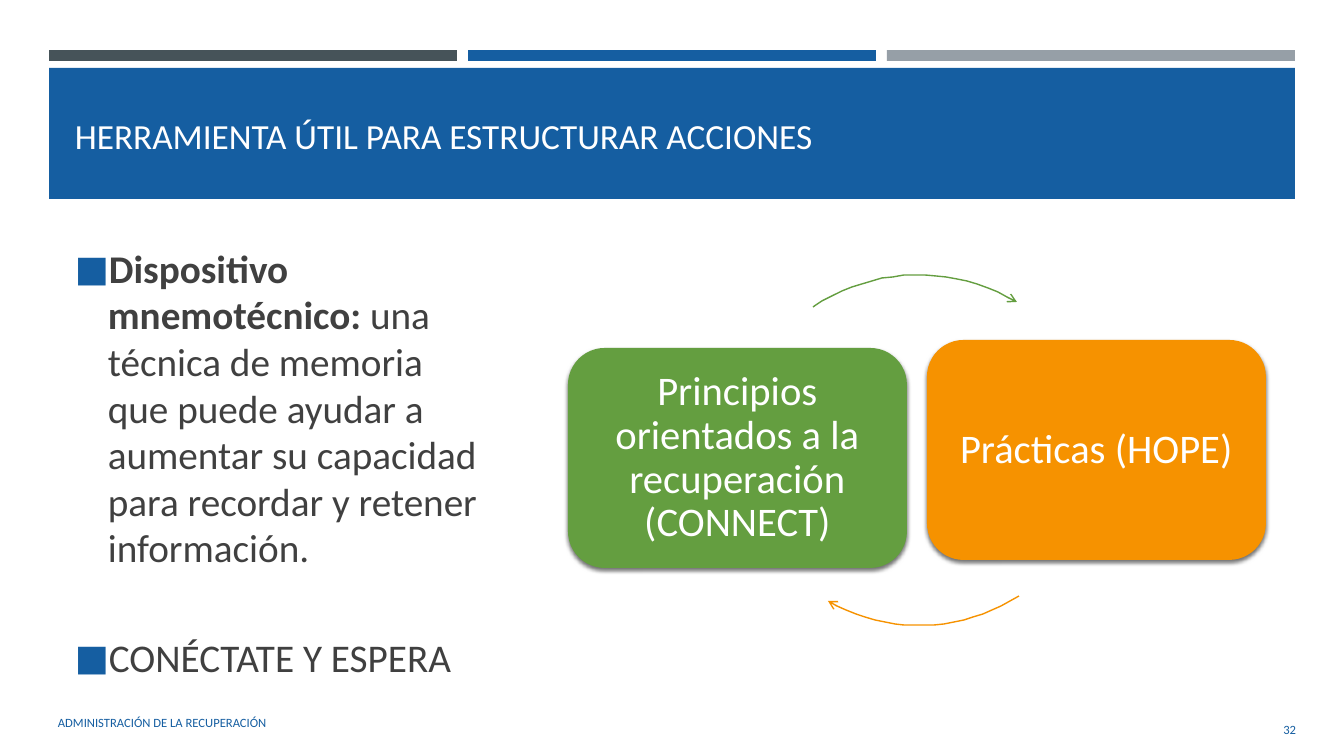
from lxml import etree
from pptx import Presentation
from pptx.dml.color import RGBColor
from pptx.enum.shapes import MSO_SHAPE
from pptx.enum.text import MSO_ANCHOR, PP_ALIGN
from pptx.oxml import parse_xml
from pptx.oxml.ns import nsdecls, qn
from pptx.util import Emu, Pt

RECT, ROUNDED = MSO_SHAPE.RECTANGLE, MSO_SHAPE.ROUNDED_RECTANGLE
TOP, MIDDLE = MSO_ANCHOR.TOP, MSO_ANCHOR.MIDDLE
LEFT, CENTER, RIGHT = PP_ALIGN.LEFT, PP_ALIGN.CENTER, PP_ALIGN.RIGHT

EMU_PER_PX = 914400 / 100.8
FONT = "Calibri"
COLORS = {
    "blue": "155EA1",
    "slate": "465359",
    "silver": "969FA7",
    "green": "649E40",
    "orange": "F69200",
    "text": "404040",
    "white": "FFFFFF",
}


def px(value):
    return Emu(round(value * EMU_PER_PX))


def rgb(name):
    return RGBColor.from_string(COLORS[name])


def apply_format(target, values):
    for name, value in values.items():
        setattr(target, name, value)


class SlideBuilder:
    def __init__(self, deck):
        self.page = deck.slides.add_slide(deck.slide_layouts[6])
        self.shapes = self.page.shapes

    def block(self, kind, place, color):
        shape = self.shapes.add_shape(kind, *map(px, place))
        shape.shadow.inherit = False
        shape.fill.solid()
        shape.fill.fore_color.rgb = rgb(color)
        shape.line.fill.background()
        return shape

    def add_text(self, frame, spans, size, color, bullet=False, **paragraph_format):
        """Fill the first paragraph, or append one when it is already used."""
        para = frame.paragraphs[0]
        if para.runs:
            para = frame.add_paragraph()
        if bullet:
            self.add_bullet(para)
        apply_format(para, paragraph_format)
        apply_format(para.font, {"size": Pt(size), "name": FONT})
        for text, bold in spans:
            span = para.add_run()
            span.text = text
            apply_format(span.font, {"size": Pt(size), "name": FONT, "bold": bold})
            span.font.color.rgb = rgb(color)

    def add_bullet(self, para):
        properties = para._p.get_or_add_pPr()
        indent = px(33)
        properties.set("marL", str(indent))
        properties.set("indent", str(-indent))
        for xml in (
            f'<a:buClr {nsdecls("a")}><a:srgbClr val="{COLORS["blue"]}"/></a:buClr>',
            f'<a:buSzPct {nsdecls("a")} val="92000"/>',
            f'<a:buFont {nsdecls("a")} typeface="{FONT}"/>',
            f'<a:buChar {nsdecls("a")} char="■"/>',
        ):
            properties.append(parse_xml(xml))

    def text_box(self, place, anchor=MIDDLE):
        frame = self.shapes.add_textbox(*map(px, place)).text_frame
        apply_format(frame, {"word_wrap": True, "vertical_anchor": anchor})
        return frame

    def card(self, place, color, text):
        shape = self.block(ROUNDED, place, color)
        effects = shape._element.spPr.find(qn("a:effectLst"))
        effects.append(parse_xml(
            f'<a:outerShdw {nsdecls("a")} blurRad="{Pt(3)}" dist="{Pt(2)}" '
            'dir="5400000" rotWithShape="0"><a:srgbClr val="000000">'
            '<a:alpha val="55000"/></a:srgbClr></a:outerShdw>'
        ))
        frame = shape.text_frame
        sides = ("left", "top", "right", "bottom")
        apply_format(frame, {f"margin_{side}": px(12) for side in sides})
        apply_format(frame, {"word_wrap": True, "vertical_anchor": MIDDLE})
        self.add_text(frame, [(text, False)], 29, "white",
                      alignment=CENTER, line_spacing=0.9)

    def curved_arrow(self, controls, color, steps=20):
        """Draw a cubic curve through four control points, with an arrowhead at its end."""
        points = []
        for step in range(steps + 1):
            t = step / steps
            weights = ((1 - t) ** 3, 3 * t * (1 - t) ** 2, 3 * t * t * (1 - t), t ** 3)
            points.append(tuple(
                sum(weight * value for weight, value in zip(weights, axis))
                for axis in zip(*controls)
            ))
        builder = self.shapes.build_freeform(*points[0], scale=EMU_PER_PX)
        builder.add_line_segments(points[1:], close=False)
        arrow = builder.convert_to_shape()
        arrow.shadow.inherit = False
        arrow.fill.background()
        arrow.line.color.rgb = rgb(color)
        arrow.line.width = Pt(1)
        outline = arrow._element.spPr.find(qn("a:ln"))
        etree.SubElement(outline, qn("a:tailEnd"), type="arrow")


def main():
    deck = Presentation()
    apply_format(deck, {"slide_width": px(1344), "slide_height": px(756)})
    slide = SlideBuilder(deck)

    for column, color in enumerate(("slate", "blue", "silver")):
        slide.block(RECT, (49 + 419 * column, 50, 408, 11), color)
    slide.block(RECT, (49, 68, 1246, 131), "blue")

    labels = (
        ((65, 79, 1216, 112), "HERRAMIENTA ÚTIL PARA ESTRUCTURAR ACCIONES", 25.2, "white", LEFT),
        ((48, 703, 752, 40), "ADMINISTRACIÓN DE LA RECUPERACIÓN", 9, "blue", LEFT),
        ((1190, 709, 116, 40), "32", 9, "blue", RIGHT),
    )
    for place, text, size, color, alignment in labels:
        slide.add_text(slide.text_box(place), [(text, False)], size, color,
                       alignment=alignment)

    body = slide.text_box((65, 241, 437, 438), TOP)
    definition = [
        ("Dispositivo mnemotécnico: ", True),
        ("una técnica de memoria que puede ayudar a aumentar su capacidad "
         "para recordar y retener información.", False),
    ]
    slide.add_text(body, definition, 28, "text", bullet=True,
                   line_spacing=0.99, space_after=Pt(6))
    slide.add_text(body, [("CONÉCTATE Y ESPERA", False)], 28, "text", bullet=True,
                   line_spacing=0.99, space_before=Pt(39))

    slide.card((568, 348, 339, 220), "green",
               "Principios orientados a la recuperación (CONNECT)")
    slide.curved_arrow(((813, 307), (874, 266), (954, 264), (1017, 302)), "green")
    slide.card((927, 340, 339, 220), "orange", "Prácticas (HOPE)")
    slide.curved_arrow(((1019, 596), (961, 633), (888, 635), (828, 601)), "orange")

    deck.save("out.pptx")


if __name__ == "__main__":
    main()
